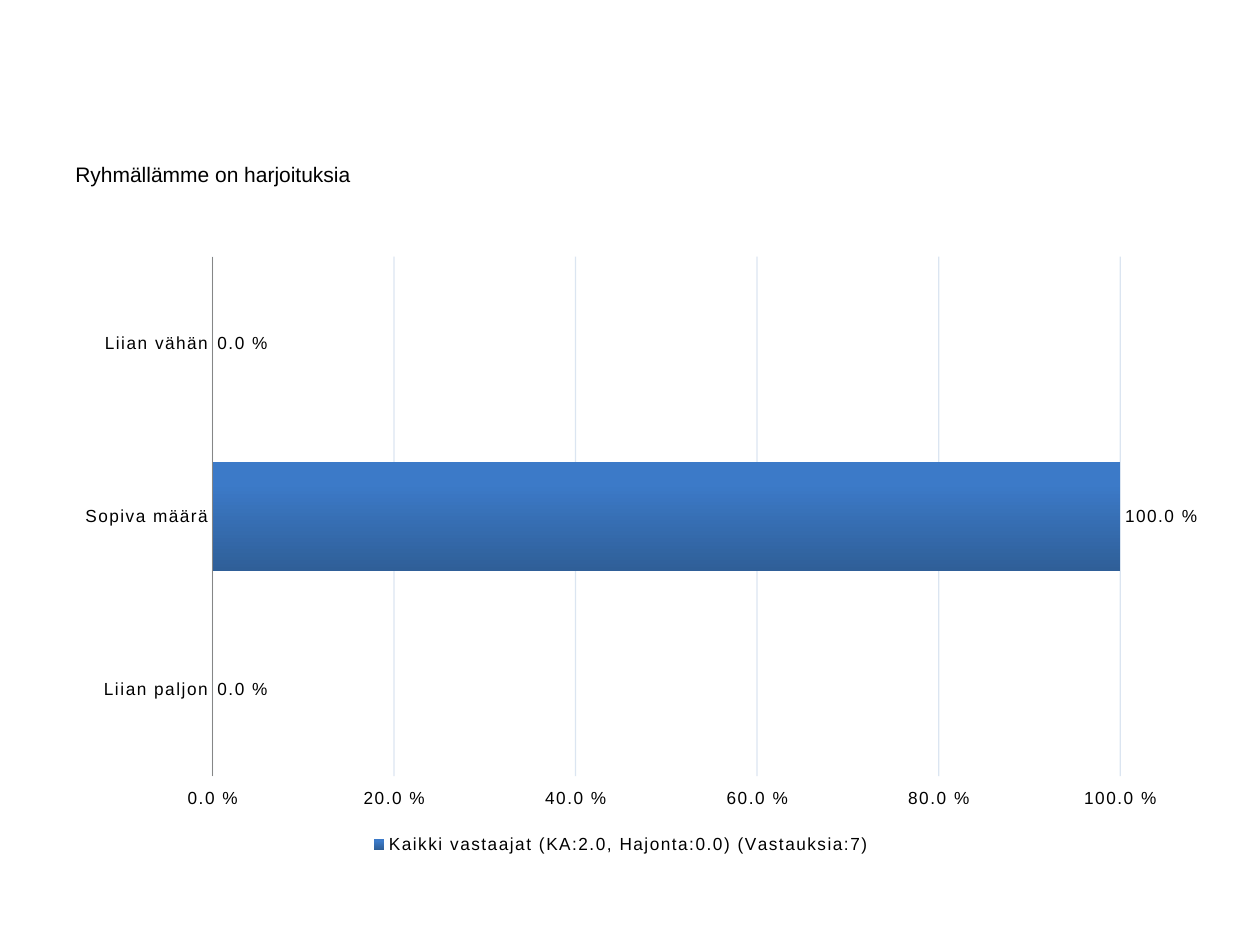
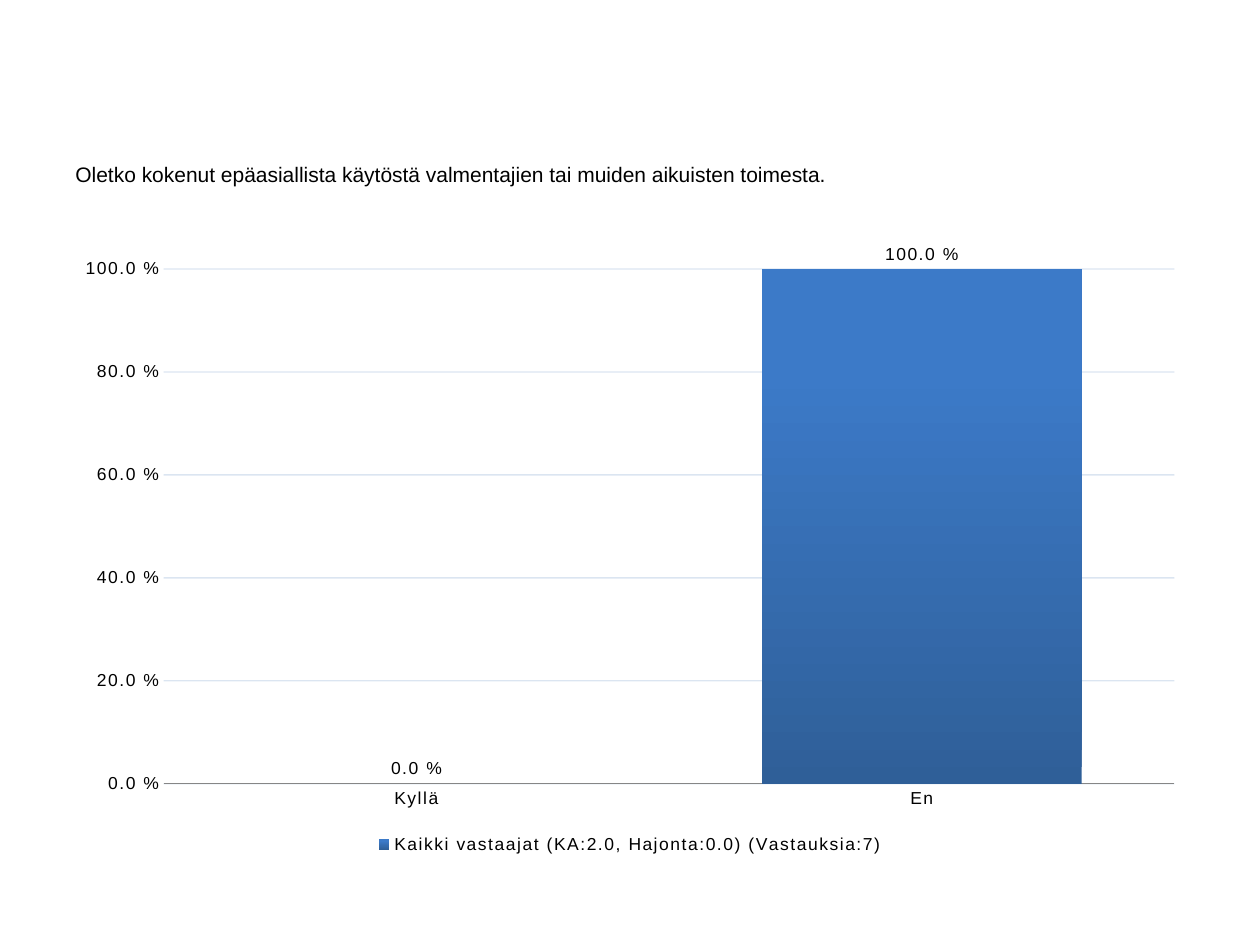
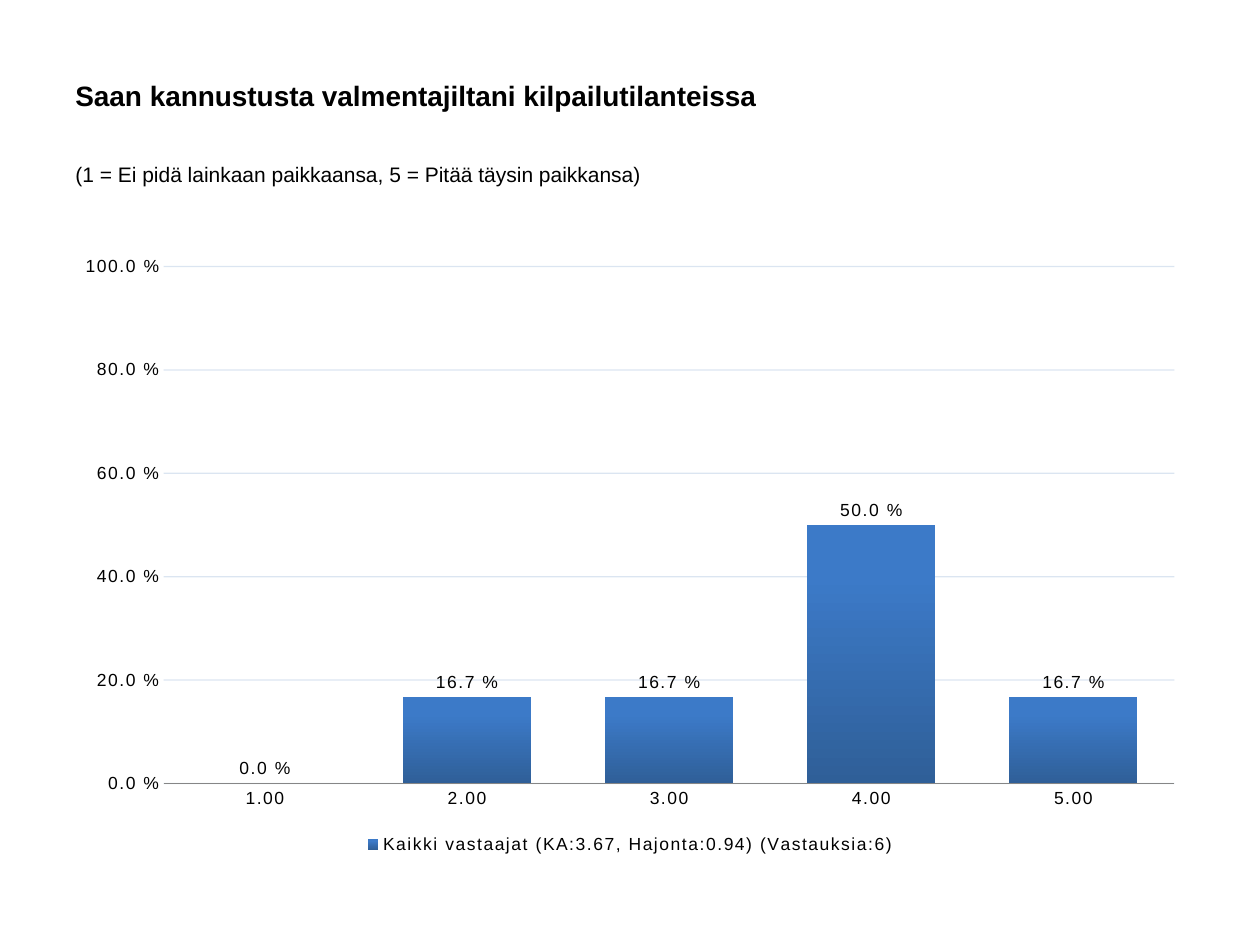
from dataclasses import dataclass

from lxml import etree
from pptx import Presentation
from pptx import util as u
from pptx.chart.data import CategoryChartData
from pptx.dml.color import RGBColor
from pptx.enum import chart as ch
from pptx.enum import text as tx
from pptx.oxml import ns

# Content
SURVEY_SLIDES = [
    {
        "title": None,
        "question": "Ryhmällämme on harjoituksia",
        "horizontal": True,
        "series": "Kaikki vastaajat (KA:2.0, Hajonta:0.0) (Vastauksia:7)",
        "answers": {"Liian vähän": 0, "Sopiva määrä": 1, "Liian paljon": 0},
    },
    {
        "title": None,
        "question": "Oletko kokenut epäasiallista käytöstä valmentajien "
                    "tai muiden aikuisten toimesta.",
        "horizontal": False,
        "series": "Kaikki vastaajat (KA:2.0, Hajonta:0.0) (Vastauksia:7)",
        "answers": {"Kyllä": 0, "En": 1},
    },
    {
        "title": "Saan kannustusta valmentajiltani kilpailutilanteissa",
        "question": "(1 = Ei pidä lainkaan paikkaansa, 5 = Pitää täysin paikkansa)",
        "horizontal": False,
        "series": "Kaikki vastaajat (KA:3.67, Hajonta:0.94) (Vastauksia:6)",
        "answers": {"1.00": 0, "2.00": 0.167, "3.00": 0.167,
                    "4.00": 0.5, "5.00": 0.167},
    },
]


@dataclass(frozen=True)
class Theme:
    font: str = "Arial"
    text: RGBColor = RGBColor(0, 0, 0)
    grid: RGBColor = RGBColor(0x4F, 0x81, 0xBD)
    grid_alpha: int = 20
    axis: RGBColor = RGBColor(0x86, 0x86, 0x86)
    bar_dark: RGBColor = RGBColor(0x2F, 0x5F, 0x98)
    bar_light: RGBColor = RGBColor(0x3C, 0x7A, 0xC8)
    title_size: int = 16
    question_size: int = 12
    chart_size: int = 10
    letter_spacing: int = 1
    percent: str = r"0.0\ %"


THEME = Theme()

# Shared column: left edge and width, then top and height of each part
LEFT, WIDTH = 0.5, 9
TITLE_BAND = (0.36, 0.79)
QUESTION_BAND = (1.23, 0.59)
CHART_BAND = (1.94, 4.88)


def band_box(band):
    top, height = band
    return [u.Inches(length) for length in (LEFT, top, WIDTH, height)]


def style_font(font, size, bold=False):
    font.name = THEME.font
    font.size = u.Pt(size)
    font.bold = bold
    font.color.rgb = THEME.text


def add_text(slide, band, text, size, bold=False,
             anchor=tx.MSO_ANCHOR.TOP, space_before=0):
    frame = slide.shapes.add_textbox(*band_box(band)).text_frame
    frame.word_wrap = True
    frame.vertical_anchor = anchor
    frame.text = text
    paragraph = frame.paragraphs[0]
    paragraph.space_before = u.Pt(space_before)
    style_font(paragraph.runs[0].font, size, bold)


def style_axes(chart, horizontal):
    category_axis, value_axis = chart.category_axis, chart.value_axis
    for axis in (category_axis, value_axis):
        axis.major_tick_mark = axis.minor_tick_mark = ch.XL_TICK_MARK.NONE
        style_font(axis.tick_labels.font, THEME.chart_size)
    category_axis.format.line.color.rgb = THEME.axis
    category_axis.format.line.width = u.Pt(0.75)
    if horizontal:
        # First answer on top, with the percent scale kept at the bottom
        category_axis.reverse_order = True
        value_axis.tick_label_position = ch.XL_TICK_LABEL_POSITION.HIGH

    value_axis.minimum_scale, value_axis.maximum_scale = 0, 1
    value_axis.major_unit = 0.2
    value_axis.tick_labels.number_format = THEME.percent
    value_axis.tick_labels.number_format_is_linked = False
    value_axis.format.line.fill.background()

    grid_line = value_axis.major_gridlines.format.line
    grid_line.color.rgb = THEME.grid
    grid_line.width = u.Pt(0.75)
    for color in value_axis.major_gridlines._xAx.iterfind(
            ".//" + ns.qn("c:majorGridlines") + "//" + ns.qn("a:srgbClr")):
        alpha = etree.SubElement(color, ns.qn("a:alpha"))
        alpha.set("val", str(THEME.grid_alpha * 1000))


def style_bars(plot):
    plot.gap_width = 58
    plot.vary_by_categories = False
    fill = plot.series[0].format.fill
    fill.gradient()
    fill.gradient_angle = 90
    dark, light = fill.gradient_stops
    dark.color.rgb, dark.position = THEME.bar_dark, 0
    light.color.rgb, light.position = THEME.bar_light, 0.8

    plot.has_data_labels = True
    labels = plot.data_labels
    labels.show_value = True
    labels.number_format = THEME.percent
    labels.number_format_is_linked = False
    labels.position = ch.XL_LABEL_POSITION.OUTSIDE_END
    style_font(labels.font, THEME.chart_size)


def add_answer_chart(slide, survey):
    data = CategoryChartData(number_format=THEME.percent)
    data.categories = list(survey["answers"])
    data.add_series(survey["series"], list(survey["answers"].values()))
    kind = (ch.XL_CHART_TYPE.BAR_CLUSTERED if survey["horizontal"]
            else ch.XL_CHART_TYPE.COLUMN_CLUSTERED)
    chart = slide.shapes.add_chart(kind, *band_box(CHART_BAND), data).chart
    chart.has_title = False
    style_font(chart.font, THEME.chart_size)
    style_axes(chart, survey["horizontal"])
    style_bars(chart.plots[0])

    chart.has_legend = True
    chart.legend.position = ch.XL_LEGEND_POSITION.BOTTOM
    chart.legend.include_in_layout = False
    style_font(chart.legend.font, THEME.chart_size)

    # Letter spacing for all chart text
    for properties in chart._chartSpace.iter(ns.qn("a:defRPr")):
        properties.set("spc", str(THEME.letter_spacing * 100))


def main():
    presentation = Presentation()
    presentation.slide_width = u.Inches(10)
    presentation.slide_height = u.Inches(7.5)
    blank_layout = presentation.slide_layouts[6]
    for survey in SURVEY_SLIDES:
        slide = presentation.slides.add_slide(blank_layout)
        if survey["title"]:
            add_text(slide, TITLE_BAND, survey["title"], THEME.title_size,
                     bold=True, anchor=tx.MSO_ANCHOR.MIDDLE)
        add_text(slide, QUESTION_BAND, survey["question"],
                 THEME.question_size, space_before=2.4)
        add_answer_chart(slide, survey)
    presentation.save("out.pptx")


if __name__ == "__main__":
    main()
